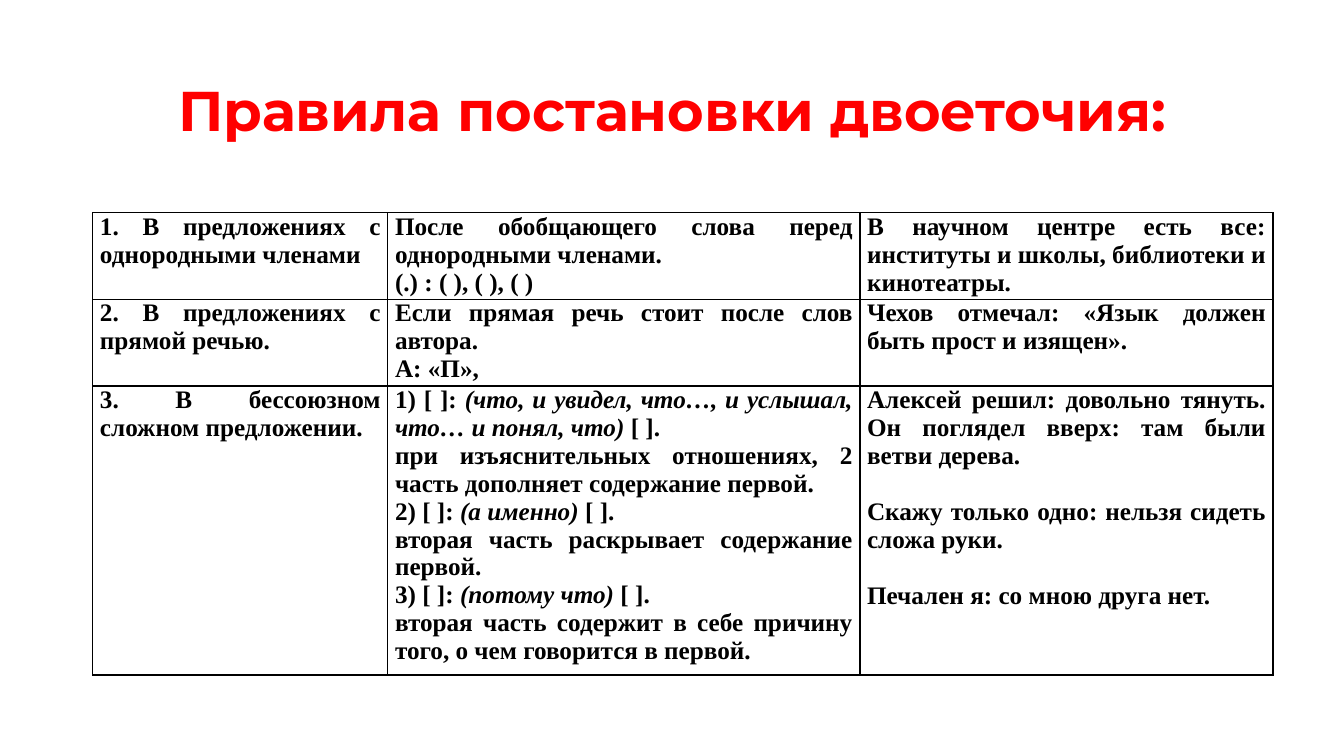
from dataclasses import dataclass

from lxml import etree
from pptx import Presentation
from pptx import util as u
from pptx.dml.color import RGBColor
from pptx.enum import text
from pptx.oxml import ns


@dataclass(frozen=True)
class Theme:
    title_color: str = "FF0000"
    body_color: str = "000000"
    border_color: str = "000000"
    title_font: str = "Montserrat"
    body_font: str = "Times New Roman"
    title_size: int = 40
    body_size: int = 18
    border_width: int = 1


@dataclass(frozen=True)
class Box:
    left: float
    top: float
    width: float
    height: float

    def lengths(self):
        return [u.Cm(side) for side in (self.left, self.top, self.width, self.height)]


THEME = Theme()
TITLE_BOX = Box(2.34, 1.02, 29.21, 3.68)
TABLE_BOX = Box(2.34, 5.36, 29.74, 11.65)
COLUMN_SHARES = (0.25, 0.4, 0.35)
ROW_SHARES = (0.1875, 0.1875, 0.625)
EXAMPLE_GAP = u.Pt(20)

RULES = [
    [
        ["1. В предложениях с однородными членами"],
        ["После обобщающего слова перед однородными членами.", "(.) : ( ), ( ), ( )"],
        ["В научном центре есть все: институты и школы, библиотеки и кинотеатры."],
    ],
    [
        ["2. В предложениях с прямой речью."],
        ["Если прямая речь стоит после слов автора.", "А: «П»,"],
        ["Чехов отмечал: «Язык должен быть прост и изящен»."],
    ],
    [
        ["3. В бессоюзном сложном предложении."],
        [
            "1) [ ]: *(что, и увидел, что…, и услышал, что… и понял, что)* [ ].",
            "при изъяснительных отношениях, 2 часть дополняет содержание первой.",
            "2) [ ]: *(а именно)* [ ].",
            "вторая часть раскрывает содержание первой.",
            "3) [ ]: *(потому что)* [ ].",
            "вторая часть содержит в себе причину того, о чем говорится в первой.",
        ],
        [
            "Алексей решил: довольно тянуть. Он поглядел вверх: там были ветви дерева.",
            "Скажу только одно: нельзя сидеть сложа руки.",
            "Печален я: со мною друга нет.",
        ],
    ],
]


def apply_format(target, values):
    for name, value in values.items():
        setattr(target, name, value)


def format_font(font, color, **values):
    apply_format(font, {"bold": True, **values})
    font.color.rgb = RGBColor.from_string(color)


def add_title(slide, box, wording):
    title = slide.shapes.title
    apply_format(title, dict(zip(("left", "top", "width", "height"), box.lengths())))
    apply_format(title.text_frame, {
        "text": wording,
        "word_wrap": True,
        "auto_size": text.MSO_AUTO_SIZE.NONE,
        "vertical_anchor": text.MSO_ANCHOR.MIDDLE,
    })
    paragraph = title.text_frame.paragraphs[0]
    apply_format(paragraph, {"alignment": text.PP_ALIGN.CENTER, "line_spacing": 0.9})
    format_font(paragraph.runs[0].font, THEME.title_color,
                name=THEME.title_font, size=u.Pt(THEME.title_size))


def add_borders(cell):
    properties = cell._tc.get_or_add_tcPr()
    for position, side in enumerate(("lnL", "lnR", "lnT", "lnB")):
        line = etree.Element(ns.qn(f"a:{side}"), w=str(u.Pt(THEME.border_width)))
        fill = etree.SubElement(line, ns.qn("a:solidFill"))
        etree.SubElement(fill, ns.qn("a:srgbClr"), val=THEME.border_color)
        properties.insert(position, line)


def fill_cell(cell, lines, gap):
    apply_format(cell, {
        "margin_left": u.Cm(0.18),
        "margin_right": u.Cm(0.18),
        "margin_top": 0,
        "margin_bottom": 0,
        "vertical_anchor": text.MSO_ANCHOR.TOP,
    })
    cell.fill.background()
    add_borders(cell)
    for index, line in enumerate(lines):
        paragraph = cell.text_frame.paragraphs[0] if index == 0 else cell.text_frame.add_paragraph()
        apply_format(paragraph, {
            "alignment": text.PP_ALIGN.JUSTIFY,
            "space_before": gap if index else 0,
        })
        for part, wording in enumerate(line.split("*")):
            run = paragraph.add_run()
            run.text = wording
            format_font(run.font, THEME.body_color, name=THEME.body_font,
                        size=u.Pt(THEME.body_size), italic=part % 2 == 1)


def add_rules_table(slide, box, rules):
    table = slide.shapes.add_table(len(rules), len(rules[0]), *box.lengths()).table
    apply_format(table, {"first_row": False, "horz_banding": False})
    for column, share in zip(table.columns, COLUMN_SHARES):
        column.width = u.Cm(box.width * share)
    for row, share, contents in zip(table.rows, ROW_SHARES, rules):
        row.height = u.Cm(box.height * share)
        for index, (cell, lines) in enumerate(zip(row.cells, contents)):
            is_example = index == len(contents) - 1
            fill_cell(cell, lines, EXAMPLE_GAP if is_example else 0)


def main():
    presentation = Presentation()
    apply_format(presentation, {"slide_width": u.Cm(33.87), "slide_height": u.Cm(19.05)})
    slide = presentation.slides.add_slide(presentation.slide_layouts.get_by_name("Title Only"))
    add_title(slide, TITLE_BOX, "Правила постановки двоеточия:")
    add_rules_table(slide, TABLE_BOX, RULES)
    presentation.save("out.pptx")


if __name__ == "__main__":
    main()
